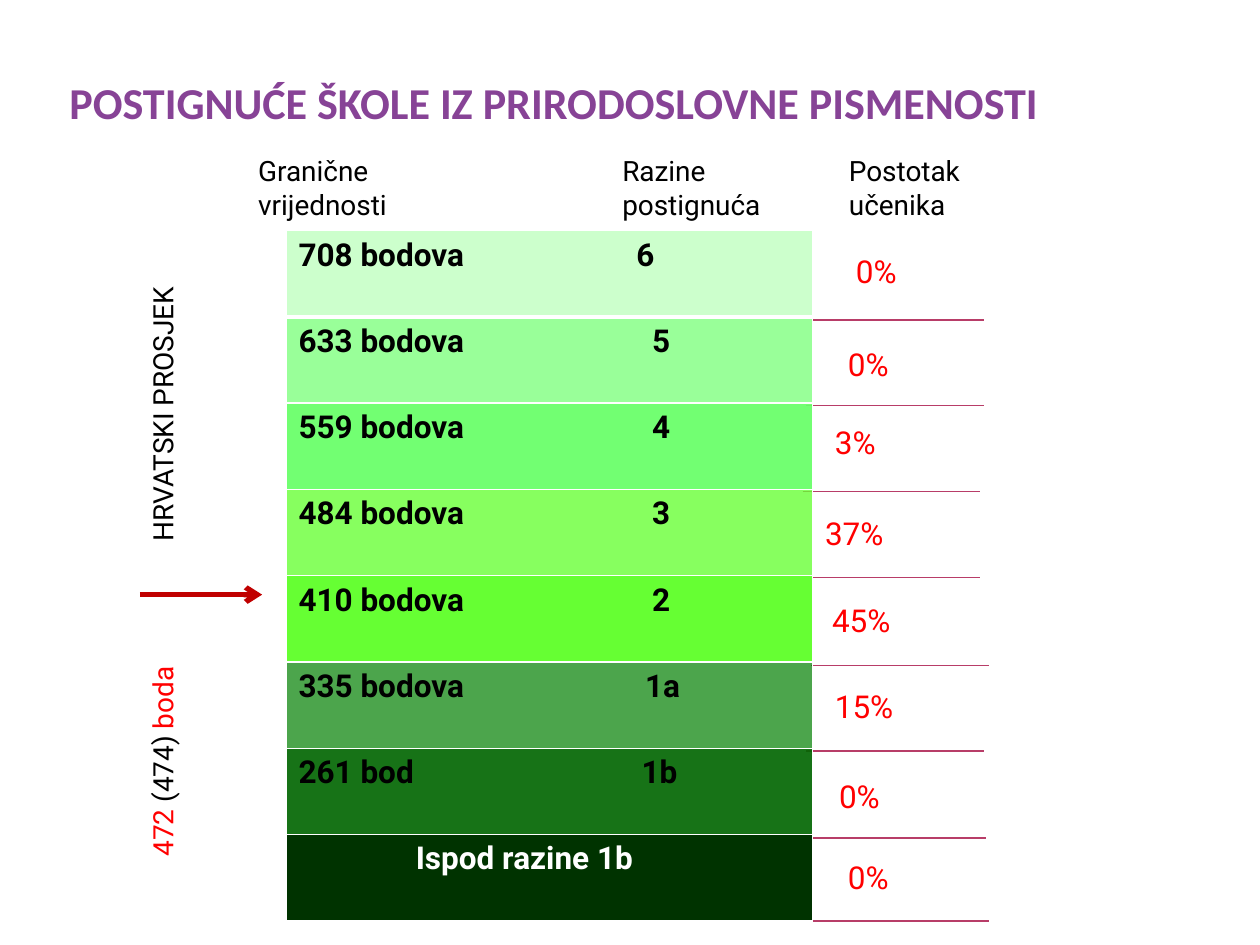
"""Build a slide on a school's science literacy results by achievement level."""
from lxml.etree import SubElement
from pptx import Presentation
from pptx.dml.color import RGBColor
from pptx.enum.shapes import MSO_CONNECTOR as Connector
from pptx.enum.text import MSO_ANCHOR as Anchor
from pptx.oxml.ns import qn
from pptx.util import Pt

COLORS = {
    "title": "874396", "text": "000000", "accent": "FF0000", "white": "FFFFFF",
    "rule": "B83D68", "arrow": "C00000",
    "level 6": "CCFFCC", "level 5": "99FF99", "level 4": "66FF66",
    "level 3": "66FF33", "level 2": "66FF33", "level 1a": "008000",
    "level 1b": "006600", "below": "003300",
}
TITLE = "POSTIGNUĆE ŠKOLE IZ PRIRODOSLOVNE PISMENOSTI"
HEADINGS = [
    ("Granične vrijednosti", 140.4, 118),
    ("Razine postignuća", 348.5, 96),
    ("Postotak učenika", 478, 106.5),
]
AVERAGE = [("472 ", "accent"), ("(474)", "text"), (" boda", "accent"),
           ("\tHRVATSKI PROSJEK", "text")]
AVERAGE_TAB = 180
# Each level: text, tab stop, left margin, fill, opacity, text colour
LEVELS = [
    ("708 bodova\t6", 193, 0, "level 6", 100, "text"),
    ("633 bodova\t5", 202, 0, "level 5", 100, "text"),
    ("559 bodova\t4", 202, 0, "level 4", 92, "text"),
    ("484 bodova\t3", 202, 0, "level 3", 78, "text"),
    ("410 bodova\t2", 202, 0, "level 2", 100, "text"),
    ("335 bodova\t1a", 198, 0, "level 1a", 70, "text"),
    ("261 bod\t1b", 196, 0, "level 1b", 91, "text"),
    ("Ispod razine 1b", None, 67, "below", 100, "white"),
]
SHARES = [
    ("0%", 482, 140.4), ("0%", 477.5, 193.7), ("3%", 470, 238.3),
    ("37%", 464.4, 290.2), ("45%", 468.4, 339.8), ("15%", 470, 388.8),
    ("0%", 472.4, 440.6), ("0%", 477.5, 486.7),
]
RULES = [(460.8, 182.9), (460.8, 231.8), (458.6, 280.8), (458.6, 330),
         (463.7, 380.2), (460.8, 429.1), (462.2, 478.8), (463.7, 526.3)]
RULE_WIDTH = 101.3
TABLE_LEFT, TABLE_TOP, TABLE_WIDTH, ROW_HEIGHT = 163.4, 131.8, 301, 49.32
BODY = {"name": "Roboto", "size": Pt(16), "bold": False}
SHARE = {**BODY, "size": Pt(18)}
LEVEL = {**SHARE, "bold": True}
HEADLINE = {"name": "Calibri", "size": Pt(25.2), "bold": True}


def rgb(name):
    return RGBColor.from_string(COLORS[name])


def write(paragraph, runs, style):
    for text, color in runs:
        run = paragraph.add_run()
        run.text = text
        for attribute, value in style.items():
            setattr(run.font, attribute, value)
        run.font.color.rgb = rgb(color)


def add_tab(paragraph, position):
    tabs = SubElement(paragraph._p.get_or_add_pPr(), qn("a:tabLst"))
    SubElement(tabs, qn("a:tab"), pos=str(Pt(position)), algn="l")


def add_text(slide, box, runs, style, tab=None):
    shape = slide.shapes.add_textbox(*map(Pt, box))
    shape.text_frame.word_wrap = True
    paragraph = shape.text_frame.paragraphs[0]
    if tab:
        add_tab(paragraph, tab)
    write(paragraph, runs, style)
    return shape


def add_line(slide, left, top, width, color, weight):
    line = slide.shapes.add_connector(
        Connector.STRAIGHT, Pt(left), Pt(top), Pt(left + width), Pt(top))
    line.line.color.rgb = rgb(color)
    line.line.width = Pt(weight)
    SubElement(line._element.spPr, qn("a:effectLst"))
    return line


def add_border(cell, side, weight):
    border = SubElement(cell._tc.get_or_add_tcPr(), qn(f"a:{side}"), w=str(Pt(weight)))
    fill = SubElement(border, qn("a:solidFill"))
    SubElement(fill, qn("a:srgbClr"), val=COLORS["white"])


def fill_cell(cell, color, opacity):
    cell.fill.solid()
    cell.fill.fore_color.rgb = rgb(color)
    if opacity < 100:
        value = cell._tc.tcPr.find(f"{qn('a:solidFill')}/{qn('a:srgbClr')}")
        SubElement(value, qn("a:alpha"), val=str(opacity * 1000))


def add_levels(slide):
    count = len(LEVELS)
    table = slide.shapes.add_table(
        count, 1, Pt(TABLE_LEFT), Pt(TABLE_TOP),
        Pt(TABLE_WIDTH), Pt(ROW_HEIGHT * count)).table
    table.first_row = table.horz_banding = False
    for index, (text, tab, margin, fill, opacity, color) in enumerate(LEVELS):
        cell = table.cell(index, 0)
        weights = {"lnL": 1, "lnR": 1, "lnT": 3 if index == 1 else 1,
                   "lnB": 3 if index == 0 else 1}
        for side, weight in weights.items():
            add_border(cell, side, weight)
        fill_cell(cell, fill, opacity)
        paragraph = cell.text_frame.paragraphs[0]
        if tab:
            add_tab(paragraph, tab)
        if margin:
            paragraph._p.get_or_add_pPr().set("marL", str(Pt(margin)))
        write(paragraph, [(text, color)], LEVEL)


def main():
    presentation = Presentation()
    presentation.slide_width, presentation.slide_height = Pt(720), Pt(540)
    slide = presentation.slides.add_slide(presentation.slide_layouts[6])

    title = add_text(slide, (36, 25.2, 570.2, 48.2), [(TITLE, "title")], HEADLINE)
    frame = {"vertical_anchor": Anchor.BOTTOM, "margin_left": Pt(3.6),
             "margin_right": Pt(3.6), "margin_top": 0, "margin_bottom": 0}
    for attribute, value in frame.items():
        setattr(title.text_frame, attribute, value)

    for text, left, width in HEADINGS:
        add_text(slide, (left, 84.2, width, 46), [(text, "text")], BODY)
    for left, top in RULES:
        add_line(slide, left, top, RULE_WIDTH, "rule", 0.9)
    average = add_text(slide, (-90.7, 299.5, 367.2, 26.6), AVERAGE, BODY, AVERAGE_TAB)
    average.rotation = 270
    arrow = add_line(slide, 80, 339.8, 69.8, "arrow", 3)
    SubElement(arrow.line._get_or_add_ln(), qn("a:tailEnd"), type="arrow")
    add_levels(slide)
    for text, left, top in SHARES:
        add_text(slide, (left, top, 84.2, 29), [(text, "accent")], SHARE)
    presentation.save("out.pptx")


if __name__ == "__main__":
    main()
